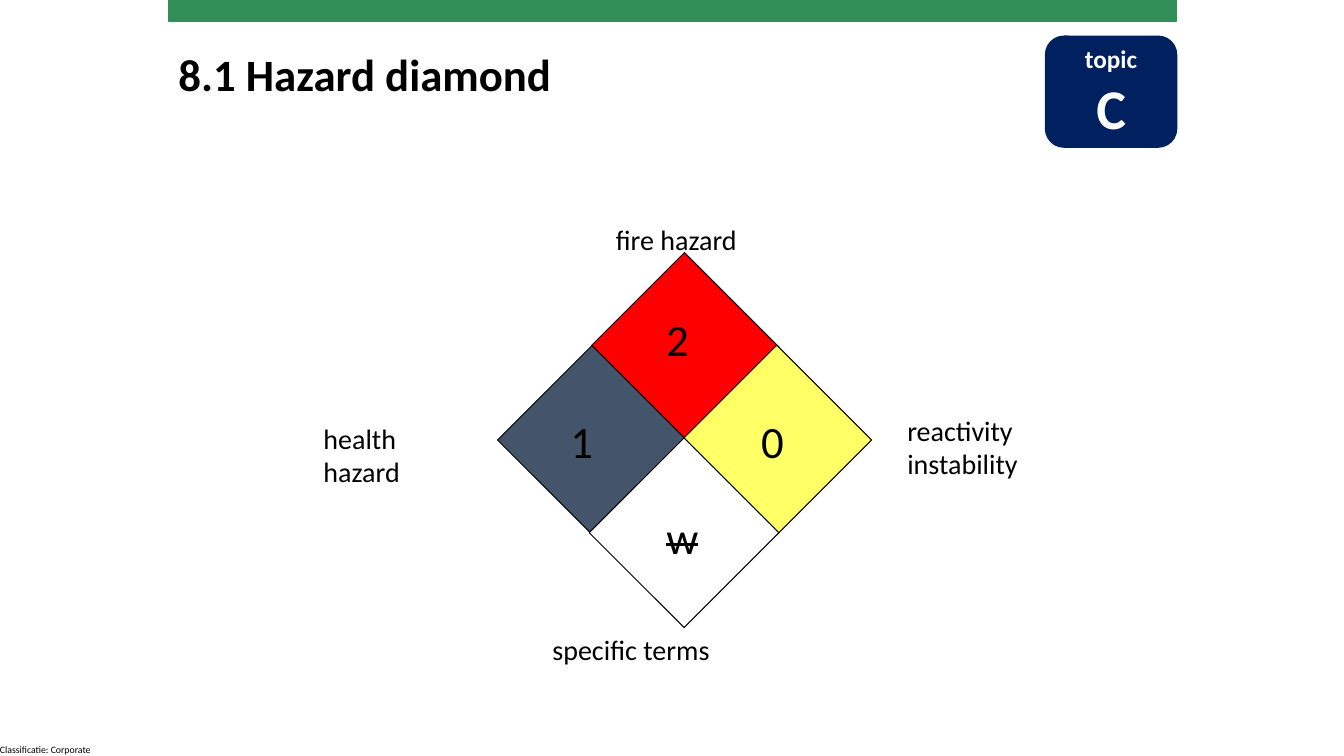
from pptx import Presentation
from pptx import util as u
from pptx.dml.color import RGBColor
from pptx.enum import shapes, text

# Content
TITLE = "8.1 Hazard diamond"
CLASSIFICATION = "Classificatie: Corporate"
TOPIC = ("topic", "C")

# Words around the diamond: lines, (left, top, width, height), wraps
LABELS = [
    (["reactivity", "instability"], (8.9, 4.05, 2.32, 0.77), True),
    (["fire hazard"], (6.01, 2.16, 1.42, 0.44), False),
    (["health", "hazard"], (3.11, 4.13, 0.97, 0.77), False),
    (["specific terms"], (5.38, 6.23, 4.71, 0.44), True),
]

# Diamond fields: colour name, (left, top, width, height)
FIELDS = [
    ("health", (5.21, 3.7, 1.33, 1.33)),
    ("fire", (6.15, 2.77, 1.3, 1.33)),
    ("reactivity", (7.04, 3.7, 1.33, 1.33)),
    ("specific", (6.12, 4.62, 1.33, 1.33)),
]

# Ratings: text, (left, top, width, height), wraps, struck out
RATINGS = [
    ("1", (5.56, 4.06, 0.43, 0.64), False, False),
    ("2", (6.51, 3.04, 0.43, 0.64), False, False),
    ("0", (7.45, 4.06, 0.39, 0.63), True, False),
    ("w", (6.51, 5.01, 0.52, 0.63), False, True),
]

THEME = {
    "font": "Calibri",
    "ink": "000000", "light": "FFFFFF", "navy": "002060", "green": "328E57",
    "health": "44546A", "fire": "FF0000",
    "reactivity": "FFFF66", "specific": "FFFFFF",
    "title": 32, "rating": 32, "label": 20,
    "topic": 18, "letter": 40, "footer": 7,
}


def colour(name):
    return RGBColor.from_string(THEME[name])


def inches(frame):
    return [u.Inches(length) for length in frame]


def add_span(para, words, size, ink="ink", bold=False):
    span = para.add_run()
    span.text = words
    span.font.name = THEME["font"]
    span.font.size = u.Pt(THEME[size])
    span.font.bold = bold
    span.font.color.rgb = colour(ink)
    return span


def add_text(page, lines, frame, size, wrap=True):
    box = page.shapes.add_textbox(*inches(frame))
    box.text_frame.word_wrap = wrap
    spans = []
    for index, line in enumerate(lines):
        para = box.text_frame.add_paragraph() if index else box.text_frame.paragraphs[0]
        spans.append(add_span(para, line, size))
    return box, spans


def add_block(page, kind, frame, fill, line, width):
    block = page.shapes.add_shape(kind, *inches(frame))
    block.shadow.inherit = False
    block.fill.solid()
    block.fill.fore_color.rgb = colour(fill)
    block.line.color.rgb = colour(line)
    block.line.width = u.Pt(width)
    return block


deck = Presentation()
deck.slide_width, deck.slide_height = u.Inches(13.33), u.Inches(7.5)
page = deck.slides.add_slide(deck.slide_layouts[5])

# Title
title = page.shapes.title
title.left, title.top, title.width, title.height = inches((1.67, 0.41, 9, 1.25))
title.text_frame.vertical_anchor = text.MSO_ANCHOR.TOP
title.text_frame.auto_size = text.MSO_AUTO_SIZE.NONE
heading = title.text_frame.paragraphs[0]
heading.alignment = text.PP_ALIGN.LEFT
add_span(heading, TITLE, "title", bold=True)

# Classification line
footer, _ = add_text(page, [CLASSIFICATION], (0, 7.38, 0.94, 0.12), "footer")
frame = footer.text_frame
frame.margin_left = frame.margin_top = frame.margin_right = frame.margin_bottom = 0

# Diamond with its labels and ratings
for lines, place, wrap in LABELS:
    add_text(page, lines, place, "label", wrap)
for name, place in FIELDS:
    field = add_block(page, shapes.MSO_SHAPE.RECTANGLE, place, name, "ink", 0.75)
    field.rotation = 315
for rating, place, wrap, struck in RATINGS:
    _, spans = add_text(page, [rating], place, "rating", wrap)
    if struck:
        spans[0].font._element.set("strike", "sngStrike")

# Topic badge
badge = add_block(page, shapes.MSO_SHAPE.ROUNDED_RECTANGLE,
                  (10.37, 0.36, 1.3, 1.1), "navy", "navy", 1)
badge.text_frame.vertical_anchor = text.MSO_ANCHOR.MIDDLE
word, letter = badge.text_frame.paragraphs[0], badge.text_frame.add_paragraph()
for para, words, size in zip((word, letter), TOPIC, ("topic", "letter")):
    para.alignment = text.PP_ALIGN.CENTER
    add_span(para, words, size, "light", True)

# Top band
add_block(page, shapes.MSO_SHAPE.RECTANGLE, (1.67, 0, 10, 0.21), "green", "green", 1)

deck.save("out.pptx")
